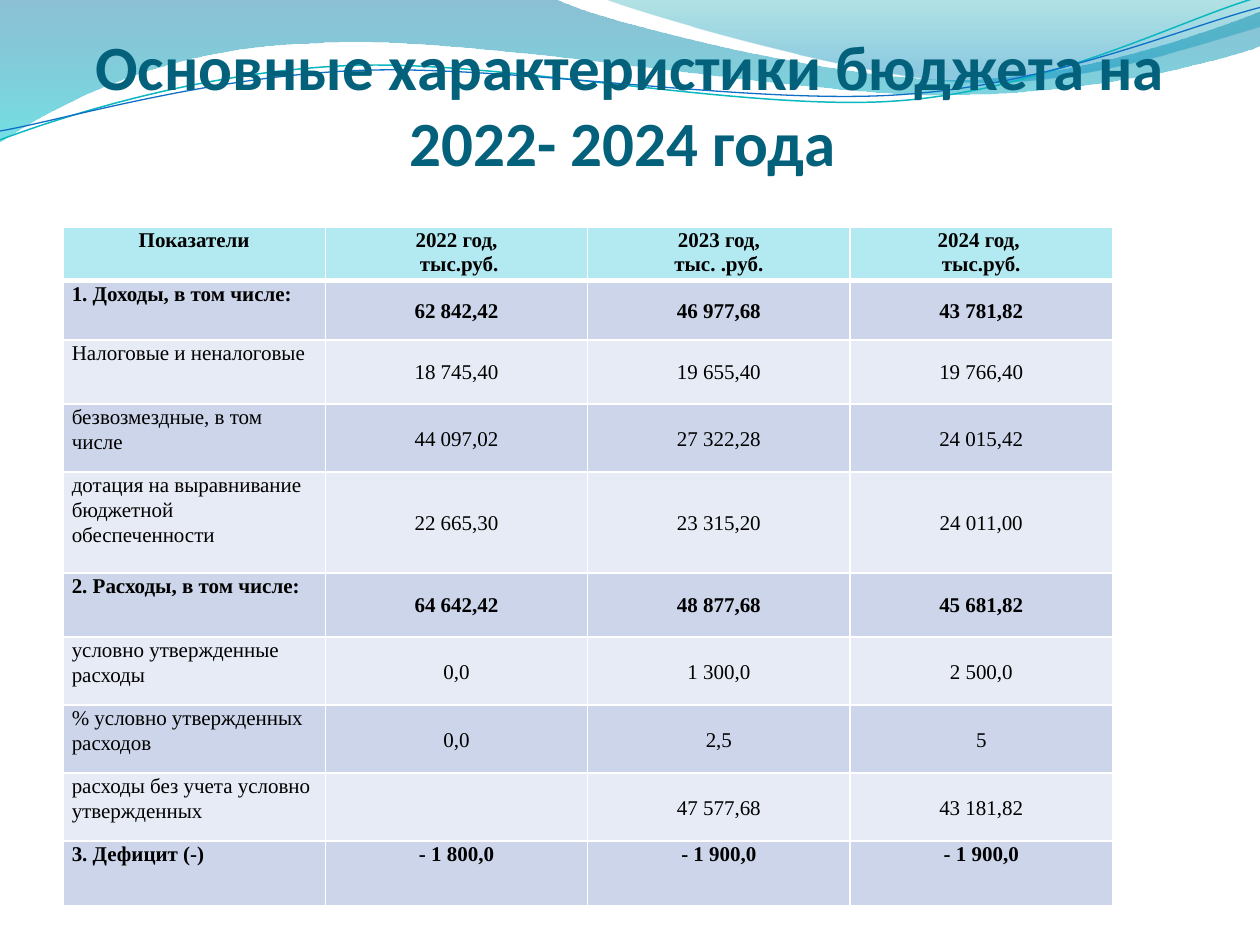
import math

from lxml import etree
from pptx import Presentation
from pptx import util as u
from pptx.dml.color import RGBColor
from pptx.enum import text as t
from pptx.oxml.ns import qn

TITLE = "Основные характеристики бюджета на 2022- 2024 года "
HEADER = ["Показатели", "2022 год,\n тыс.руб.", "2023 год,\nтыс. .руб.", "2024 год, \nтыс.руб."]
# label, three years, row height, bold; "~" stands for a non-breaking space
ROWS = [
    ("1. Доходы, в том числе:", "62~842,42", "46~977,68", "43~781,82", 0.47, True),
    ("Налоговые и неналоговые", "18~745,40", "19~655,40", "19~766,40", 0.51, False),
    ("безвозмездные, в том числе", "44~097,02", "27~322,28", "24~015,42", 0.54, False),
    ("дотация на выравнивание бюджетной обеспеченности",
     "22~665,30", "23~315,20", "24~011,00", 0.8, False),
    ("2. Расходы, в том числе:", "64 642,42", "48~877,68", "45~681,82", 0.51, True),
    ("условно утвержденные расходы", "0,0", "1~300,0", "2~500,0", 0.54, False),
    ("% условно утвержденных расходов", "0,0", "2,5", "5", 0.54, False),
    ("расходы без учета условно утвержденных", "", "47~577,68", "43~181,82", 0.54, False),
    ("3. Дефицит (-)", "- 1~800,0", "- 1~900,0", "- 1~900,0", 0.51, True),
]
HEADER_HEIGHT = 0.38
HEADER_FILL, BANDS = "B3EAF2", ("CCD5EA", "E7EBF5")

# Each outline: a start point, then line ends (2 numbers) or Bezier curves (6 numbers).
# Gradient stops: position, colour, opacity in percent.
WAVES = [
    ([(0, 0), (4.4, -0.01), (4.76, 0.17, 6.64, 0.63, 7.58, 0.63),
      (8.53, 0.63, 9.58, 0.26, 10, 0.09), (10.01, 0.36),
      (9.83, 0.44, 8.7, 0.76, 7.46, 0.75), (6.22, 0.75, 3.82, 0.28, 2.57, 0.34),
      (1.29, 0.36, 0.46, 0.83, -0.01, 1.13), (0, 0)],
     [(0, "0074A1", 45), (1, "00C6CF", 55)]),
    ([(4.79, -0.01), (5.09, 0.11, 6.82, 0.62, 7.69, 0.65),
      (8.56, 0.69, 9.61, 0.32, 10, 0.21), (10, 0), (4.79, -0.01)],
     [(0, "00A1A9", 30), (0.8, "008BBF", 45)]),
]
# outline as it shows, centre of rotation, colour, width
CURVES = [
    ([(0, 1.11), (0.48, 0.93, 1.58, 0.57, 2.77, 0.52),
      (3.95, 0.47, 5.93, 0.89, 7.13, 0.8), (8.33, 0.71, 9.38, 0.15, 9.98, -0.02)],
     (4.99, 0.58), "0AB8BF", 0.85),
    ([(0, 1.04), (0.47, 0.96, 1.64, 0.61, 2.83, 0.56),
      (4.03, 0.51, 5.97, 0.84, 7.17, 0.75), (8.36, 0.67, 9.41, 0.21, 10, 0.06)],
     (5, 0.59), "0F6FC6", 0.75),
]
CURVE_ROTATION = 357.3


def color(value):
    return RGBColor.from_string(value)


def pairs(step):
    return list(zip(step[::2], step[1::2]))


def add_outline(slide, outline, close):
    """Lay all nodes as lines, then join each run of three into a Bezier curve."""
    points = [(u.Inches(x), u.Inches(y)) for step in outline for x, y in pairs(step)]
    builder = slide.shapes.build_freeform(*points[0], scale=1.0)
    builder.add_line_segments(points[1:], close=close)
    shape = builder.convert_to_shape()
    shape.shadow.inherit = False
    segments = iter(list(shape.element.iter(qn("a:lnTo"))))
    for step in outline[1:]:
        first, *others = [next(segments) for _ in pairs(step)]
        if others:
            curve = etree.Element(qn("a:cubicBezTo"))
            first.addprevious(curve)
            for segment in (first, *others):
                curve.append(segment[0])
                segment.getparent().remove(segment)
    return shape


def add_wave(slide, outline, stops):
    wave = add_outline(slide, outline, True)
    wave.line.fill.background()
    wave.fill.gradient()
    wave.fill.gradient_angle = 270
    for stop, (position, value, _) in zip(wave.fill.gradient_stops, stops):
        stop.position = position
        stop.color.rgb = color(value)
    stop_colors = wave.element.spPr.iter(qn("a:srgbClr"))
    for stop_color, (_, _, opacity) in zip(stop_colors, stops):
        etree.SubElement(stop_color, qn("a:alpha"), val=str(opacity * 1000))


def turn(step, center, degrees):
    cos, sin = math.cos(math.radians(degrees)), math.sin(math.radians(degrees))
    turned = []
    for x, y in pairs(step):
        dx, dy = x - center[0], y - center[1]
        turned += [center[0] + dx * cos - dy * sin, center[1] + dx * sin + dy * cos]
    return turned


def add_curve(slide, outline, center, value, width):
    level = [turn(step, center, -CURVE_ROTATION) for step in outline]
    curve = add_outline(slide, level, False)
    curve.rotation = CURVE_ROTATION
    curve.fill.background()
    curve.line.color.rgb = color(value)
    curve.line.width = u.Pt(width)


def style(para, font, size, value, bold, align):
    para.alignment = align
    for span in para.runs:
        span.font.name, span.font.size, span.font.bold = font, u.Pt(size), bold
        span.font.color.rgb = color(value)


def add_title(slide):
    box = slide.shapes.add_textbox(u.Inches(0.5), u.Inches(0.77), u.Inches(9), u.Inches(1.25))
    frame = box.text_frame
    frame.word_wrap = True
    frame.vertical_anchor = t.MSO_ANCHOR.BOTTOM
    frame.margin_left = frame.margin_right = 0
    frame.margin_bottom = u.Inches(0.6)
    frame.text = TITLE
    style(frame.paragraphs[0], "Calibri", 36, "04617B", True, t.PP_ALIGN.CENTER)


def set_borders(cell, top, bottom):
    properties = cell._tc.get_or_add_tcPr()
    for side, width in (("L", 1), ("R", 1), ("T", top), ("B", bottom)):
        line = etree.SubElement(properties, qn("a:ln" + side), w=str(u.Pt(width)))
        fill = etree.SubElement(line, qn("a:solidFill"))
        etree.SubElement(fill, qn("a:srgbClr"), val="FFFFFF")


def add_budget_table(slide):
    heights = [HEADER_HEIGHT] + [row[4] for row in ROWS]
    texts = [HEADER] + [row[:4] for row in ROWS]
    bolds = [True] + [row[5] for row in ROWS]
    last = len(ROWS)
    table = slide.shapes.add_table(len(texts), len(HEADER), u.Inches(0.5), u.Inches(1.8),
                                   u.Inches(8.33), u.Inches(sum(heights))).table
    table.first_row = table.horz_banding = False
    for r, (height, row, bold) in enumerate(zip(heights, texts, bolds)):
        table.rows[r].height = u.Inches(height)
        for c, words in enumerate(row):
            cell = table.cell(r, c)
            set_borders(cell, 3 if r == 1 else 1, 3 if r == 0 else 1)
            cell.fill.solid()
            cell.fill.fore_color.rgb = color(BANDS[(r - 1) % 2] if r else HEADER_FILL)
            cell.margin_left = cell.margin_right = u.Inches(0.07)
            cell.margin_top = cell.margin_bottom = 0
            middle = c > 0 and 0 < r < last
            cell.vertical_anchor = t.MSO_ANCHOR.MIDDLE if middle else t.MSO_ANCHOR.TOP
            cell.text_frame.text = words.replace("~", chr(160))
            align = t.PP_ALIGN.CENTER if c or r == 0 else t.PP_ALIGN.LEFT
            for para in cell.text_frame.paragraphs:
                para.line_spacing = 1.07
                style(para, "Times New Roman", 12, "000000", bold, align)


def main():
    deck = Presentation()
    deck.slide_width, deck.slide_height = u.Inches(10), u.Inches(7.5)
    slide = deck.slides.add_slide(deck.slide_layouts[6])
    for wave in WAVES:
        add_wave(slide, *wave)
    for curve in CURVES:
        add_curve(slide, *curve)
    add_title(slide)
    add_budget_table(slide)
    deck.save("out.pptx")


if __name__ == "__main__":
    main()
